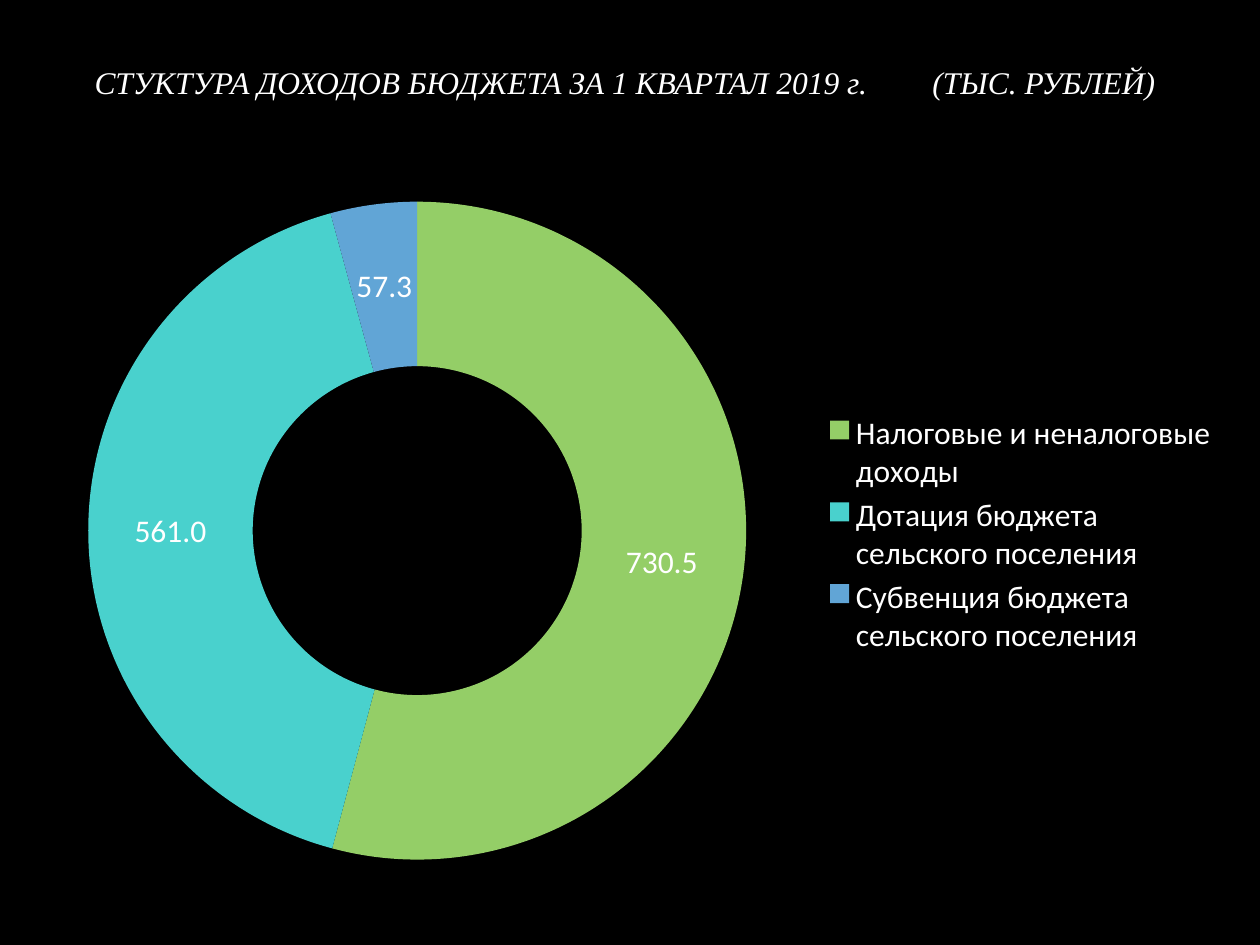
"""Build a slide with a doughnut chart of first-quarter budget revenue."""
from lxml.etree import SubElement
from pptx import Presentation
from pptx.chart.data import CategoryChartData
from pptx.dml.color import RGBColor
from pptx.enum.chart import XL_CHART_TYPE, XL_LEGEND_POSITION
from pptx.oxml import parse_xml
from pptx.oxml.ns import nsdecls, qn
from pptx.util import Inches, Pt

COLORS = {
    "background": "000000",
    "text": "FFFFFF",
    "taxes": "94CE67",
    "grant": "49D1CD",
    "subvention": "61A5D6",
}
REVENUES = [
    ("Налоговые и неналоговые доходы", 730.5, "taxes"),
    ("Дотация бюджета сельского поселения", 561, "grant"),
    ("Субвенция бюджета сельского поселения", 57.3, "subvention"),
]


def paint(fill, color):
    fill.solid()
    fill.fore_color.rgb = RGBColor.from_string(COLORS[color])


def style_font(font, name):
    font.name = name
    font.size = Pt(18)
    font.color.rgb = RGBColor.from_string(COLORS["text"])


def add_title(slide, parts, tab_stop):
    title = slide.shapes.add_textbox(
        Inches(0.35), Inches(0.45), Inches(9.21), Inches(0.4)
    )
    frame = title.text_frame
    frame.word_wrap = True
    frame.margin_left = Inches(0.4)
    paragraph = frame.paragraphs[0]
    tabs = SubElement(paragraph._p.get_or_add_pPr(), qn("a:tabLst"))
    SubElement(tabs, qn("a:tab"), pos=str(tab_stop), algn="l")
    run = paragraph.add_run()
    run.text = "\t".join(parts)
    style_font(run.font, "Times New Roman")
    run.font.italic = True


def place(element, index, target, x, y, w, h):
    for old in element.findall(qn("c:layout")):
        element.remove(old)
    modes = '<c:xMode val="edge"/><c:yMode val="edge"/>'
    inner = '<c:layoutTarget val="inner"/>' if target == "inner" else ""
    bounds = "".join(
        f'<c:{key} val="{value}"/>' for key, value in zip("xywh", (x, y, w, h))
    )
    element.insert(index, parse_xml(
        f'<c:layout {nsdecls("c")}><c:manualLayout>{inner}{modes}{bounds}'
        "</c:manualLayout></c:layout>"
    ))


def add_revenue_chart(slide):
    data = CategoryChartData(number_format="0.0")
    data.categories = [name for name, _, _ in REVENUES]
    data.add_series("Series 1", [value for _, value, _ in REVENUES])
    chart = slide.shapes.add_chart(
        XL_CHART_TYPE.DOUGHNUT,
        Inches(0.12), Inches(1.47), Inches(9.67), Inches(5.54), data,
    ).chart
    chart.has_title = False
    style_font(chart.font, "Calibri")

    chart.has_legend = True
    chart.legend.position = XL_LEGEND_POSITION.RIGHT
    chart.legend.include_in_layout = False
    place(chart.legend._element, 1, "outer", 0.66, 0.32, 0.33, 0.36)
    plot_area = chart.element.find(".//" + qn("c:plotArea"))
    place(plot_area, 0, "inner", 0.06, 0.02, 0.54, 0.95)

    plot = chart.plots[0]
    plot.vary_by_categories = True
    for index, (_, _, color) in enumerate(REVENUES):
        paint(plot.series[0].points[index].format.fill, color)
    plot.has_data_labels = True
    labels = plot.data_labels
    labels.show_value = True
    labels.show_percentage = False
    labels.number_format = "0.0"
    labels.number_format_is_linked = False
    style_font(labels.font, "Calibri")


def main():
    presentation = Presentation()
    presentation.slide_width = Inches(10)
    presentation.slide_height = Inches(7.5)
    slide = presentation.slides.add_slide(presentation.slide_layouts[6])
    paint(slide.background.fill, "background")
    add_title(
        slide,
        ["СТУКТУРА ДОХОДОВ БЮДЖЕТА ЗА 1 КВАРТАЛ 2019 г.", "(ТЫС. РУБЛЕЙ)"],
        Inches(6.65),
    )
    add_revenue_chart(slide)
    presentation.save("out.pptx")


if __name__ == "__main__":
    main()
